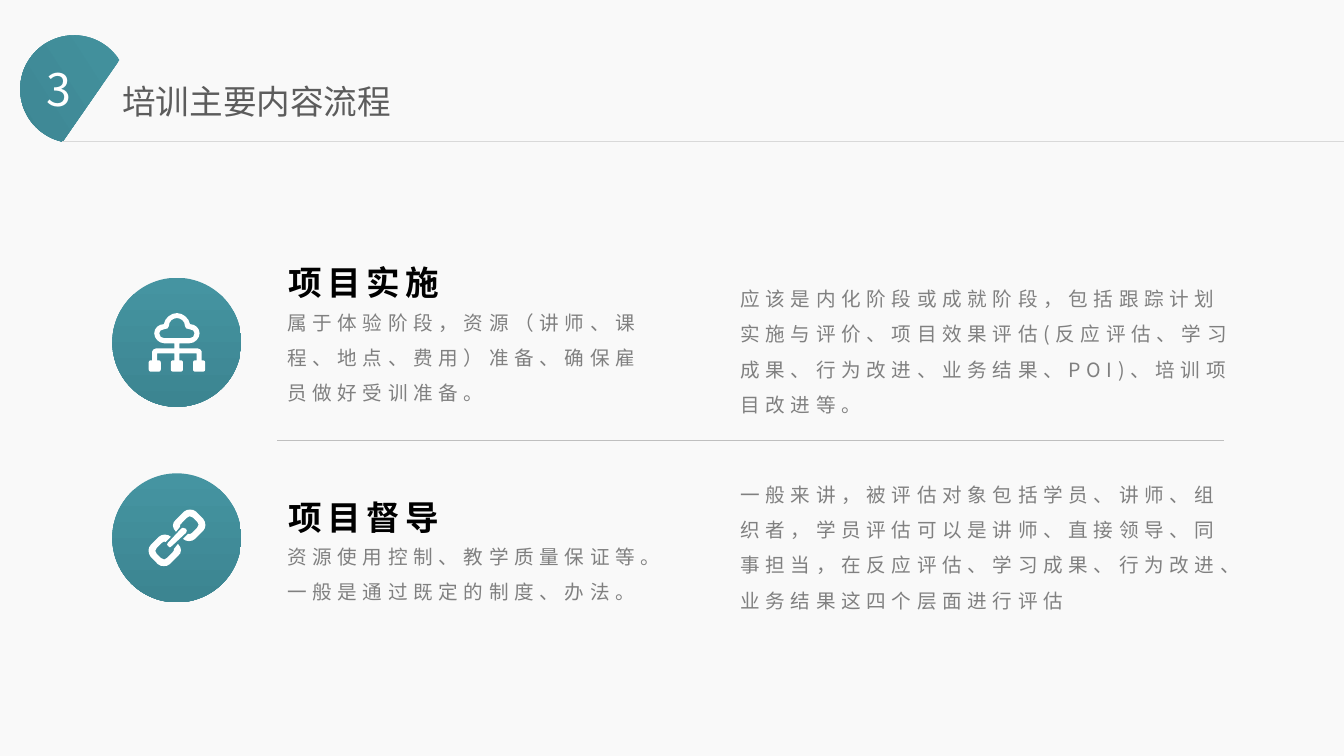
from lxml.etree import SubElement
from pptx import Presentation
from pptx.dml.color import RGBColor
from pptx.enum.shapes import MSO_CONNECTOR, MSO_SHAPE
from pptx.enum.text import MSO_ANCHOR, MSO_AUTO_SIZE, PP_ALIGN
from pptx.oxml.ns import qn
from pptx.util import Pt

FONT = "Noto Sans CJK JP"
TEAL = ("4594A1", "3C8591")
GREY = "808080"
ICON_UNIT = 72
BADGE = 92.2

CLOUD_HALF = [
    (0, 0), (6, 0, 12, 5, 13, 11), (18, 11, 22.5, 15, 22.5, 20),
    (22.5, 25, 18, 30, 12.5, 30), (2.5, 30), (2.5, 35), (20.5, 35),
    (22.5, 35, 24.5, 37, 24.5, 38), (24.5, 47), (26.5, 47),
    (27.5, 47, 28, 48, 28, 49), (28, 56), (28, 57, 27.5, 58, 26.5, 58),
    (17.5, 58), (16.5, 58, 16, 57, 16, 56), (16, 49),
    (16, 48, 16.5, 47, 17.5, 47), (19.5, 47), (19.5, 40), (2.5, 40),
    (2.5, 47), (4.5, 47), (5.5, 47, 6, 48, 6, 49), (6, 56),
    (6, 57, 5.5, 58, 4.5, 58), (0, 58),
]
CLOUD_HOLE_HALF = [
    (0, 5), (4, 5, 8, 8, 8, 13), (8, 15, 10, 16, 12.5, 16),
    (15.5, 16, 17.5, 18, 17.5, 20), (17.5, 23, 15.5, 25, 12.5, 25), (0, 25),
]
CHAIN_LINK = [
    (13, -28), (15, -28, 17, -28, 19, -26), (26, -19),
    (29, -15, 29, -10, 26, -7), (18, 1), (15, 4, 9, 4, 6, 1), (11, -4),
    (12, -3, 14, -4, 15, -5), (20, -10), (22, -12, 22, -14, 20, -16),
    (16, -20), (14, -22, 11, -22, 10, -20), (5, -15),
    (3, -14, 3, -12, 3, -11), (-1, -6), (-5, -10, -5, -15, -1, -18),
    (7, -26), (9, -28, 11, -28, 13, -28),
]
CHAIN_BAR = [
    (6, -10), (7, -10, 8, -9, 9, -9), (10, -8, 10, -6, 9, -5), (-5, 8),
    (-6, 10, -8, 10, -9, 8), (-10, 7, -10, 6, -9, 5), (4, -9),
    (5, -10, 6, -10, 6, -10),
]


def color(code):
    """Turn a hex string into a colour."""
    return RGBColor.from_string(code)


def paint_gradient(fill, codes, angle):
    """Give a fill a two-stop linear gradient."""
    fill.gradient()
    fill.gradient_angle = angle
    for stop, code, position in zip(fill.gradient_stops, codes, (0, 1)):
        stop.color.rgb = color(code)
        stop.position = position


def pairs(segment):
    """Split a flat segment into its points."""
    return list(zip(segment[0::2], segment[1::2]))


def mirror(half):
    """Close a half outline with its reflection, walked backwards."""
    whole = [pairs(segment) for segment in half]
    back = []
    for before, segment in zip(whole[-2::-1], whole[:0:-1]):
        points = segment[-2::-1] + before[-1:]
        back.append([(-x, y) for x, y in points])
    return [[(x, y - 29) for x, y in segment] for segment in whole + back]


def chain_contours():
    """Turn one link by half a circle to get the other, with a bar between."""
    link = [pairs(segment) for segment in CHAIN_LINK]
    opposite = [[(-x, -y) for x, y in segment] for segment in link]
    return [link, [pairs(segment) for segment in CHAIN_BAR], opposite]


def bend(icon, contours):
    """Join each three points of a curved segment into one cubic curve."""
    points = icon.element.iter(qn("a:lnTo"))
    steps = iter(list(points))
    for contour in contours:
        for segment in contour[1:]:
            lines = [next(steps) for _ in segment]
            if len(lines) == 3:
                lines[0].tag = qn("a:cubicBezTo")
                for line in lines[1:]:
                    lines[0].append(line[0])
                    line.getparent().remove(line)


def draw_icon(slide, center_x, center_y, contours):
    """Draw white contours around a centre."""
    outlines = [
        [(x * ICON_UNIT, y * ICON_UNIT) for segment in contour for x, y in segment]
        for contour in contours
    ]
    builder = slide.shapes.build_freeform(*outlines[0][0], scale=Pt(0.01))
    for number, outline in enumerate(outlines):
        if number:
            builder.move_to(*outline[0])
        builder.add_line_segments(outline[1:], close=True)
    icon = builder.convert_to_shape(Pt(center_x), Pt(center_y))
    bend(icon, contours)
    icon.shadow.inherit = False
    icon.fill.solid()
    icon.fill.fore_color.rgb = color("FFFFFF")
    icon.line.fill.background()


def draw_badge(slide, preset, left, top, size, rotation=0):
    """Draw a teal badge of a preset shape."""
    badge = slide.shapes.add_shape(preset, Pt(left), Pt(top), Pt(size), Pt(size))
    badge.rotation = rotation
    badge.shadow.inherit = False
    paint_gradient(badge.fill, TEAL, 270)
    badge.line.fill.background()


def draw_rule(slide, left, right, y, code, width):
    """Draw a thin horizontal line."""
    rule = slide.shapes.add_connector(MSO_CONNECTOR.STRAIGHT, Pt(left), Pt(y), Pt(right), Pt(y))
    rule.line.color.rgb = color(code)
    rule.line.width = Pt(width)
    SubElement(rule.element.spPr, qn("a:effectLst"))


def write(holder, box, text, size, code=None, bold=False, spacing=None):
    """Place a text holder and fill it with one run."""
    holder.left, holder.top, holder.width, holder.height = (Pt(value) for value in box)
    frame = holder.text_frame
    frame.word_wrap = True
    frame.auto_size = MSO_AUTO_SIZE.SHAPE_TO_FIT_TEXT
    frame.vertical_anchor = MSO_ANCHOR.TOP
    paragraph = frame.paragraphs[0]
    paragraph.alignment = PP_ALIGN.LEFT
    paragraph.line_spacing = 1.5 if spacing else 1.0
    run = paragraph.add_run()
    run.text = text
    run.font.size = Pt(size)
    run.font.bold = bold
    if code:
        run.font.color.rgb = color(code)
    run.font.name = FONT
    properties = run.font._element
    SubElement(properties, qn("a:ea")).set("typeface", FONT)
    if spacing:
        properties.set("spc", str(spacing * 100))
    return run


def add_text(slide, box, *content, **style):
    """Add a text box with one run."""
    return write(slide.shapes.add_textbox(0, 0, 0, 0), box, *content, **style)


def build_header(slide, left, top, right):
    """Build the numbered badge, the title and the line below."""
    draw_badge(slide, MSO_SHAPE.CHORD, left, top, 77, 57.3)
    draw_rule(slide, left + 30.2, right, top + 75.8, "D9D9D9", 0.5)
    title = write(slide.shapes.title, (left + 65.8, top + 28.8, 301.7, 36), "培训主要内容流程", 24)
    paint_gradient(title.font.fill, ("5C5C5C", "2F2F31"), 180)
    add_text(slide, (left + 11.5, top + 15.1, 37.4, 46.1), "3", 32, "FFFFFF")


def build_stage(slide, left, top, contours, heading, heading_drop, detail, detail_height, note, note_width):
    """Build one stage: badge with icon, heading, detail and note."""
    draw_badge(slide, MSO_SHAPE.OVAL, left, top, BADGE)
    draw_icon(slide, left + BADGE / 2 + 0.1, top + BADGE / 2, contours)
    heading_top = top + heading_drop
    add_text(slide, (left + 118.5, heading_top, 134.6, 46.1), heading, 24, "000000", bold=True, spacing=4)
    add_text(slide, (left + 117.8, heading_top + 40.6, 282.2, detail_height), detail, 14, GREY, spacing=4)
    add_text(slide, (left + 441.6, top - 5.3, note_width, 106.6), note, 14, GREY, spacing=4)


def main():
    """Build the slide and save it."""
    deck = Presentation()
    deck.slide_width, deck.slide_height = Pt(960), Pt(540)
    slide = deck.slides.add_slide(deck.slide_layouts[5])
    slide.background.fill.solid()
    slide.background.fill.fore_color.rgb = color("F9F9F9")
    build_header(slide, 14.4, 25.2, 960)
    build_stage(
        slide, 80.2, 198.4, [mirror(CLOUD_HALF), mirror(CLOUD_HOLE_HALF)], "项目实施", -29.1,
        "属于体验阶段，资源（讲师、课程、地点、费用）准备、确保雇员做好受训准备。", 80.6,
        "应该是内化阶段或成就阶段，包括跟踪计划实施与评价、项目效果评估(反应评估、学习成果、行为改进、业务结果、POI)、培训项目改进等。", 373.2)
    draw_rule(slide, 198, 874, 314.6, "BFBFBF", 0.25)
    build_stage(
        slide, 80.2, 338.1, chain_contours(), "项目督导", -1.4,
        "资源使用控制、教学质量保证等。一般是通过既定的制度、办法。", 55.4,
        "一般来讲，被评估对象包括学员、讲师、组织者，学员评估可以是讲师、直接领导、同事担当，在反应评估、学习成果、行为改进、业务结果这四个层面进行评估", 358.6)
    deck.save("out.pptx")


if __name__ == "__main__":
    main()
